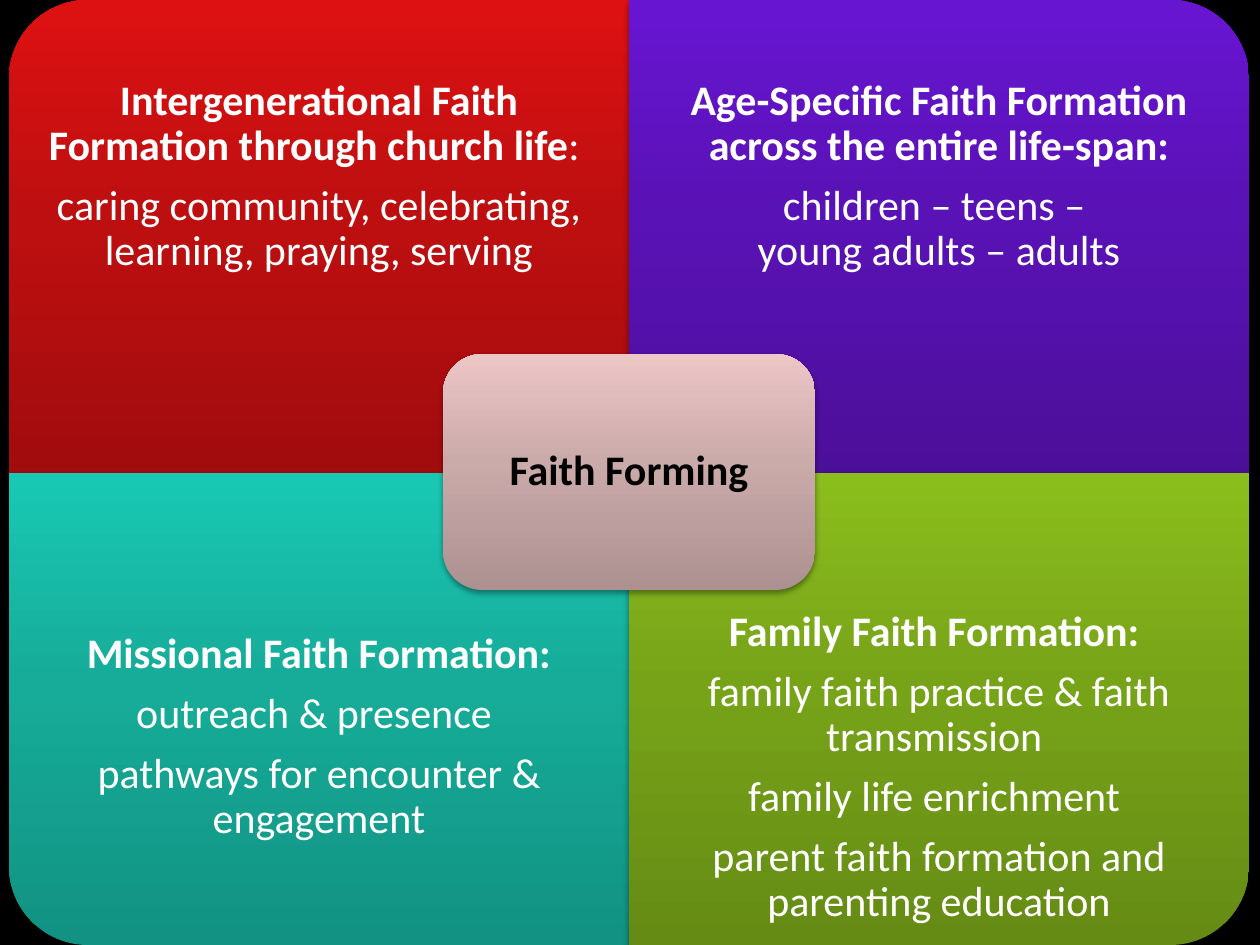
import pptx
import pptx.dml.color
import pptx.enum.shapes
import pptx.enum.text
import pptx.oxml
import pptx.util
from dataclasses import dataclass

EMU_PER_PX = 914400 // 126
WIDTH, HEIGHT = 1260, 945
NS = 'xmlns:a="http://schemas.openxmlformats.org/drawingml/2006/main"'


@dataclass(frozen=True)
class Theme:
    font: str = "Calibri"
    size: int = 24
    background: str = "000000"
    light_text: str = "FFFFFF"
    dark_text: str = "000000"
    # Gradients run from the bottom edge to the top edge
    red: tuple = ("A10C0D", "BE0F10", "DD1112")
    purple: tuple = ("4C0F9A", "5912B5", "6815D2")
    teal: tuple = ("129282", "16AC99", "19C8B3")
    green: tuple = ("658B15", "77A319", "8BBE1D")
    rose: tuple = ("AD9191", "CBAAAA", "EDC6C6")


def px(length):
    return pptx.util.Emu(round(length * EMU_PER_PX))


def rgb(value):
    return pptx.dml.color.RGBColor.from_string(value)


def set_all(target, values):
    for name, value in values.items():
        setattr(target, name, value)


class MatrixSlide:
    def __init__(self, slide, theme):
        self.slide, self.theme = slide, theme
        slide.background.fill.solid()
        slide.background.fill.fore_color.rgb = rgb(theme.background)

    def panel(self, preset, box, colours, rotation=0):
        """Gradient panel that covers box once it has been rotated."""
        left, top, width, height = box
        if rotation % 180:
            left, top = left + (width - height) / 2, top + (height - width) / 2
            width, height = height, width
        panel = self.slide.shapes.add_shape(preset, *map(px, (left, top, width, height)))
        panel.rotation = rotation
        panel.line.fill.background()
        panel.shadow.inherit = False
        self.gradient(panel, colours)
        self.shadow(panel)

    def gradient(self, panel, colours):
        panel.fill.background()
        stops = "".join(
            f'<a:gs pos="{pos}"><a:srgbClr val="{colour}"/></a:gs>'
            for pos, colour in zip((0, 55000, 100000), colours))
        gradient = pptx.oxml.parse_xml(
            f'<a:gradFill {NS} rotWithShape="0"><a:gsLst>{stops}</a:gsLst>'
            '<a:lin ang="16200000" scaled="0"/></a:gradFill>')
        properties = panel._element.spPr
        no_fill = properties.find(pptx.oxml.ns.qn("a:noFill"))
        properties.replace(no_fill, gradient)

    def shadow(self, panel):
        effects = panel._element.spPr.find(pptx.oxml.ns.qn("a:effectLst"))
        effects.append(pptx.oxml.parse_xml(
            f'<a:outerShdw {NS} blurRad="40000" dist="25400" dir="5400000" rotWithShape="0">'
            '<a:srgbClr val="000000"><a:alpha val="38000"/></a:srgbClr></a:outerShdw>'))

    def text(self, box, heading, lines=(), colour=None, inset=24, extra_bottom=0, tail=""):
        """Bold heading, an optional plain tail to it, then plain lines."""
        frame = self.slide.shapes.add_textbox(*map(px, box)).text_frame
        set_all(frame, {
            "word_wrap": True,
            "vertical_anchor": pptx.enum.text.MSO_ANCHOR.MIDDLE,
            "margin_left": px(inset), "margin_right": px(inset),
            "margin_top": px(inset), "margin_bottom": px(inset + extra_bottom),
        })
        for index, content in enumerate((heading, *lines)):
            paragraph = frame.add_paragraph() if index else frame.paragraphs[0]
            set_all(paragraph, {
                "text": content,
                "alignment": pptx.enum.text.PP_ALIGN.CENTER,
                "line_spacing": 0.9,
                "space_after": pptx.util.Pt(8.4),
            })
            if tail and index == 0:
                paragraph.add_run().text = tail
            for position, run in enumerate(paragraph.runs):
                set_all(run.font, {
                    "name": self.theme.font,
                    "size": pptx.util.Pt(self.theme.size),
                    "bold": index == 0 and position == 0,
                })
                run.font.color.rgb = rgb(colour or self.theme.light_text)


def main():
    theme = Theme()
    deck = pptx.Presentation()
    deck.slide_width, deck.slide_height = px(WIDTH), px(HEIGHT)
    matrix = MatrixSlide(deck.slides.add_slide(deck.slide_layouts[6]), theme)
    shapes = pptx.enum.shapes.MSO_SHAPE

    # Four quadrants, each with its outer corner rounded
    left, width, middle, text_height = 9, 620, 473, 354
    quadrants = [
        (0, 0, 270, theme.red, dict(
            heading="Intergenerational Faith Formation through church life", tail=": ",
            lines=["caring community, celebrating, learning, praying, serving"])),
        (1, 0, 0, theme.purple, dict(
            heading="Age-Specific Faith Formation across the entire life-span:",
            lines=["children – teens – \vyoung adults – adults"])),
        (0, 1, 180, theme.teal, dict(
            heading="Missional Faith Formation:", extra_bottom=61,
            lines=["outreach & presence ", "pathways for encounter & engagement"])),
        (1, 1, 90, theme.green, dict(
            heading="Family Faith Formation: ",
            lines=["family faith practice & faith transmission ",
                   "family life enrichment ",
                   "parent faith formation and parenting education"])),
    ]
    for column, row, rotation, colours, wording in quadrants:
        x = left + column * width
        matrix.panel(shapes.ROUND_1_RECTANGLE,
                     (x, row * middle, width, HEIGHT - middle + 1 - row),
                     colours, rotation)
        matrix.text((x, row * (HEIGHT - text_height), width, text_height), **wording)

    # Centre label
    matrix.panel(shapes.ROUNDED_RECTANGLE, (443, 354, 372, 236), theme.rose)
    matrix.text((455, 366, 348, 212), "Faith Forming", colour=theme.dark_text, inset=12)

    deck.save("out.pptx")


if __name__ == "__main__":
    main()
